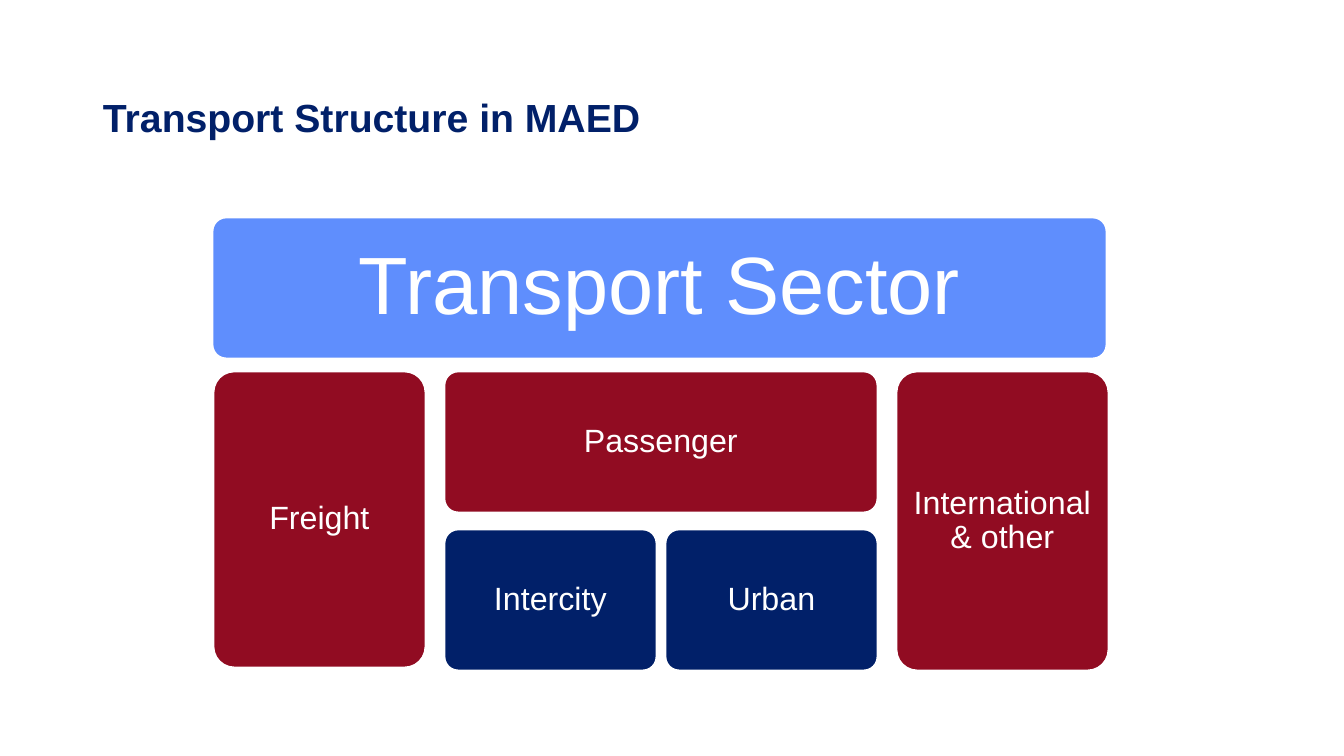
import pptx
import pptx.dml.color
import pptx.enum.shapes
import pptx.enum.text
import pptx.util

EMU_PER_INCH = 914400
PX_PER_INCH = 100.8
COLORS = {"navy": "012069", "sky": "5F8EFD", "crimson": "910C22", "white": "FFFFFF"}


def px(length):
    return pptx.util.Emu(round(length * EMU_PER_INCH / PX_PER_INCH))


def write_text(shape, words, color, inset, frame_format, paragraph_format, font_format):
    """Fill a shape with one paragraph; inset holds the side and top margins in px."""
    frame = shape.text_frame
    frame.text = words
    side, top = map(px, inset)
    margins = {"margin_left": side, "margin_right": side,
               "margin_top": top, "margin_bottom": top}
    paragraph = frame.paragraphs[0]
    font = paragraph.runs[0].font
    for target, values in ((frame, {**margins, **frame_format}),
                           (paragraph, {"line_spacing": 0.9, **paragraph_format}),
                           (font, {"name": "Arial", **font_format})):
        for attribute, value in values.items():
            setattr(target, attribute, value)
    font.color.rgb = pptx.dml.color.RGBColor.from_string(COLORS[color])


presentation = pptx.Presentation()
presentation.slide_width = px(1344)
presentation.slide_height = px(756)
slide = presentation.slides.add_slide(presentation.slide_layouts.get_by_name("Title Only"))

ANCHOR = pptx.enum.text.MSO_ANCHOR
ALIGN = pptx.enum.text.PP_ALIGN
FRAME = {"word_wrap": True, "auto_size": pptx.enum.text.MSO_AUTO_SIZE.NONE}

heading = slide.shapes.title
heading.left, heading.top, heading.width, heading.height = map(px, (93, 0, 1159, 146))
write_text(heading, "Transport Structure in MAED", "navy", (10, 5),
           {**FRAME, "vertical_anchor": ANCHOR.BOTTOM},
           {"alignment": ALIGN.LEFT},
           {"size": pptx.util.Pt(28), "bold": True})

# Outer columns sit one wide gap from the passenger pair, which has a narrow gap
COLUMN, ROW = 213, 142
WIDE_GAP, NARROW_GAP = 18, 8
freight_left = 213
intercity_left = freight_left + COLUMN + WIDE_GAP
urban_left = intercity_left + COLUMN + NARROW_GAP
international_left = urban_left + COLUMN + WIDE_GAP
sector_top, mode_top, trip_top = 217, 371, 529
passenger_width = 2 * COLUMN + NARROW_GAP
full_height = trip_top + ROW - mode_top

blocks = [
    ("Transport Sector", 212, sector_top, 895, ROW, "sky", 58, 24),
    ("Freight", freight_left, mode_top, COLUMN, full_height - 3, "crimson", 23, 10),
    ("Passenger", intercity_left, mode_top, passenger_width, ROW, "crimson", 23, 10),
    ("Intercity", intercity_left, trip_top, COLUMN, ROW, "navy", 23, 10),
    ("Urban", urban_left, trip_top, COLUMN, ROW, "navy", 23, 10),
    ("International & other", international_left, mode_top, COLUMN, full_height,
     "crimson", 23, 10),
]
for words, left, top, width, height, fill, size, inset in blocks:
    block = slide.shapes.add_shape(pptx.enum.shapes.MSO_SHAPE.ROUNDED_RECTANGLE,
                                   *map(px, (left, top, width, height)))
    block.adjustments[0] = 0.1
    block.shadow.inherit = False
    block.fill.solid()
    block.fill.fore_color.rgb = pptx.dml.color.RGBColor.from_string(COLORS[fill])
    block.line.color.rgb = pptx.dml.color.RGBColor.from_string(COLORS["white"])
    block.line.width = pptx.util.Pt(2)
    write_text(block, words, "white", (inset, inset),
               {**FRAME, "vertical_anchor": ANCHOR.MIDDLE},
               {"alignment": ALIGN.CENTER},
               {"size": pptx.util.Pt(size)})

presentation.save("out.pptx")
